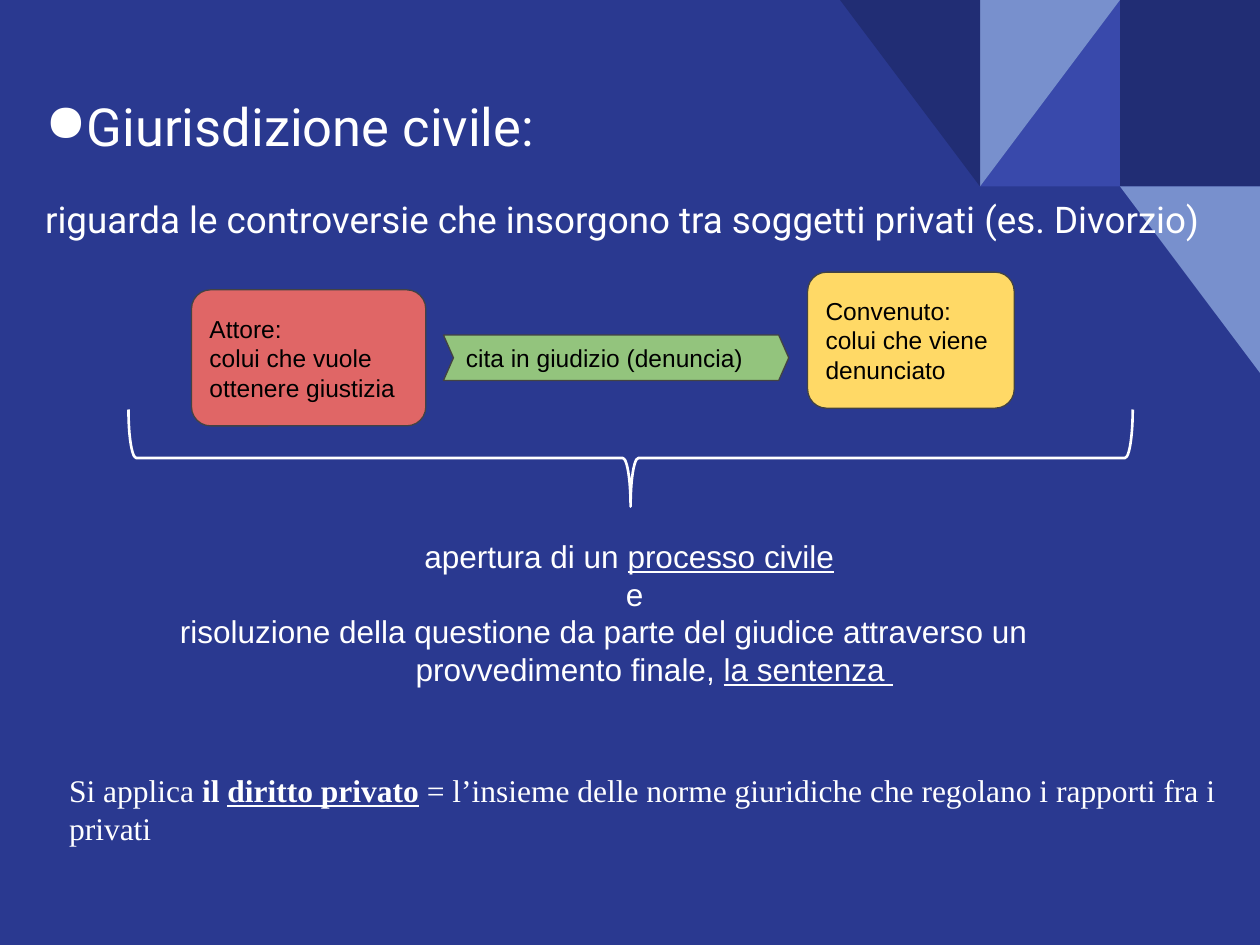
from lxml.etree import SubElement
from pptx import Presentation
from pptx.dml.color import RGBColor
from pptx.enum.shapes import MSO_SHAPE as Preset
from pptx.enum.text import MSO_ANCHOR as Anchor, PP_ALIGN as Align
from pptx.oxml.ns import qn
from pptx.util import Inches, Pt

WIDTH, HEIGHT = 10, 7.5
COLUMN, ROW = WIDTH / 9, 1.48  # grid of the corner ornament
WHITE, BLACK, OUTLINE = "FFFFFF", "000000", "434343"
NAVY, INDIGO, SKY, BACKGROUND = "212D74", "3949AB", "7890CD", "2A3990"
UNDERLINE = {"underline": True}
BOLD = {"bold": True}

HEADING = {"name": "Roboto", "size": Pt(30)}
SUBTITLE = {"name": "Roboto", "size": Pt(21)}
LABEL = {"name": "Arial", "size": Pt(14)}
OUTCOME = {"name": "Arial", "size": Pt(18)}
NOTE = {"name": "Times New Roman", "size": Pt(18)}


def color(hex_value):
    return RGBColor.from_string(hex_value)


def set_attributes(target, values):
    for name, value in values.items():
        setattr(target, name, value)


def write(shape, paragraphs, style, hex_value, anchor=Anchor.TOP):
    """Each paragraph is a list of (text, extra font values) runs."""
    frame = shape.text_frame
    set_attributes(frame, {"word_wrap": True, "vertical_anchor": anchor})
    for side in ("left", "top", "right", "bottom"):
        setattr(frame, f"margin_{side}", Inches(0.1))
    for index, runs in enumerate(paragraphs):
        paragraph = frame.add_paragraph() if index else frame.paragraphs[0]
        paragraph.alignment = Align.LEFT
        for text, extra in runs:
            run = paragraph.add_run()
            run.text = text
            set_attributes(run.font, {**style, **extra})
            run.font.color.rgb = color(hex_value)


def add_preset(shapes, preset, box, fill=None, line=None, line_width=0.75):
    shape = shapes.add_shape(preset, *map(Inches, box))
    shape.shadow.inherit = False
    if fill:
        shape.fill.solid()
        shape.fill.fore_color.rgb = color(fill)
    else:
        shape.fill.background()
    if line:
        shape.line.color.rgb = color(line)
        shape.line.width = Pt(line_width)
    else:
        shape.line.fill.background()
    return shape


def add_text(slide, box, paragraphs, style):
    text_box = slide.shapes.add_textbox(*map(Inches, box))
    write(text_box, paragraphs, style, WHITE)
    return text_box


def add_label(slide, preset, box, adjustment, fill, lines):
    shape = add_preset(slide.shapes, preset, box, fill, OUTLINE)
    shape.adjustments[0] = adjustment
    write(shape, [[(line, {})] for line in lines], LABEL, BLACK, Anchor.MIDDLE)


def add_bullet(paragraph, character):
    properties = paragraph._p.get_or_add_pPr()
    bullet_color = SubElement(properties, qn("a:buClr"))
    SubElement(bullet_color, qn("a:srgbClr"), val=WHITE)
    SubElement(properties, qn("a:buChar"), char=character)


def indent(paragraph, inches):
    paragraph._p.get_or_add_pPr().set("marL", str(Inches(inches)))


def add_ornament(slide):
    group = slide.shapes.add_group_shape()
    # column, row, preset, rotation, flipped, fill
    for column, row, preset, rotation, flipped, fill in (
        (8, 0, Preset.RECTANGLE, 0, False, NAVY),
        (7, 0, Preset.RIGHT_TRIANGLE, 0, True, INDIGO),
        (7, 0, Preset.RIGHT_TRIANGLE, 180, True, SKY),
        (6, 0, Preset.RIGHT_TRIANGLE, 180, False, NAVY),
        (8, 1, Preset.RIGHT_TRIANGLE, 180, False, SKY),
    ):
        box = (column * COLUMN, row * ROW, COLUMN, ROW)
        tile = add_preset(group.shapes, preset, box, fill)
        tile.rotation = rotation
        if flipped:
            tile._element.spPr.xfrm.set("flipH", "1")


def add_parties(slide):
    add_label(slide, Preset.ROUNDED_RECTANGLE, (1.52, 2.3, 1.86, 1.08), 0.14,
              "E06666", ["Attore:", "colui che vuole ottenere giustizia"])
    add_label(slide, Preset.ROUNDED_RECTANGLE, (6.41, 2.16, 1.64, 1.08), 0.14,
              "FFD966", ["Convenuto:", "colui che viene denunciato"])
    add_label(slide, Preset.CHEVRON, (3.52, 2.66, 2.74, 0.36), 0.22,
              "93C47D", ["cita in giudizio (denuncia)"])


def add_brace(slide):
    brace = add_preset(slide.shapes, Preset.LEFT_BRACE,
                       (4.62, -0.35, 0.77, 7.97), line=WHITE, line_width=1.5)
    brace.rotation = 270
    brace.adjustments[0] = 0.08


def add_outcome(slide):
    outcome = add_text(slide, (1.33, 4.16, 7.46, 2.68), [
        [("apertura di un ", {}), ("processo civile", UNDERLINE)],
        [("e", {})],
        [("risoluzione della questione da parte del giudice attraverso un", {})],
        [("provvedimento finale, ", {}), ("la sentenza ", UNDERLINE)],
    ], OUTCOME)
    for paragraph, inches in zip(outcome.text_frame.paragraphs,
                                 (1.94, 3.54, 0, 1.87)):
        indent(paragraph, inches)


def main():
    presentation = Presentation()
    set_attributes(presentation, {"slide_width": Inches(WIDTH),
                                  "slide_height": Inches(HEIGHT)})
    slide = presentation.slides.add_slide(presentation.slide_layouts[6])
    slide.background.fill.solid()
    slide.background.fill.fore_color.rgb = color(BACKGROUND)
    add_ornament(slide)

    # Heading and definition
    heading = add_text(slide, (0.26, 0.12, 8.99, 1.23),
                       [[("Giurisdizione civile:", {})]], HEADING)
    heading.text_frame.vertical_anchor = Anchor.BOTTOM
    add_bullet(heading.text_frame.paragraphs[0], "●")
    add_text(slide, (0.26, 1.46, 9.61, 3), [[(
        "riguarda le controversie che insorgono tra soggetti privati "
        "(es. Divorzio)", {})]], SUBTITLE)

    # Parties and what follows from the claim
    add_parties(slide)
    add_brace(slide)
    add_outcome(slide)

    # Applicable law
    add_text(slide, (0.45, 6.02, 9.61, 1.38), [[
        ("Si applica ", {}), ("il ", BOLD),
        ("diritto privato", {**BOLD, **UNDERLINE}), (" ", BOLD),
        ("= l’insieme delle norme giuridiche che regolano i rapporti "
         "fra i privati", {}),
    ]], NOTE)
    presentation.save("out.pptx")


if __name__ == "__main__":
    main()
